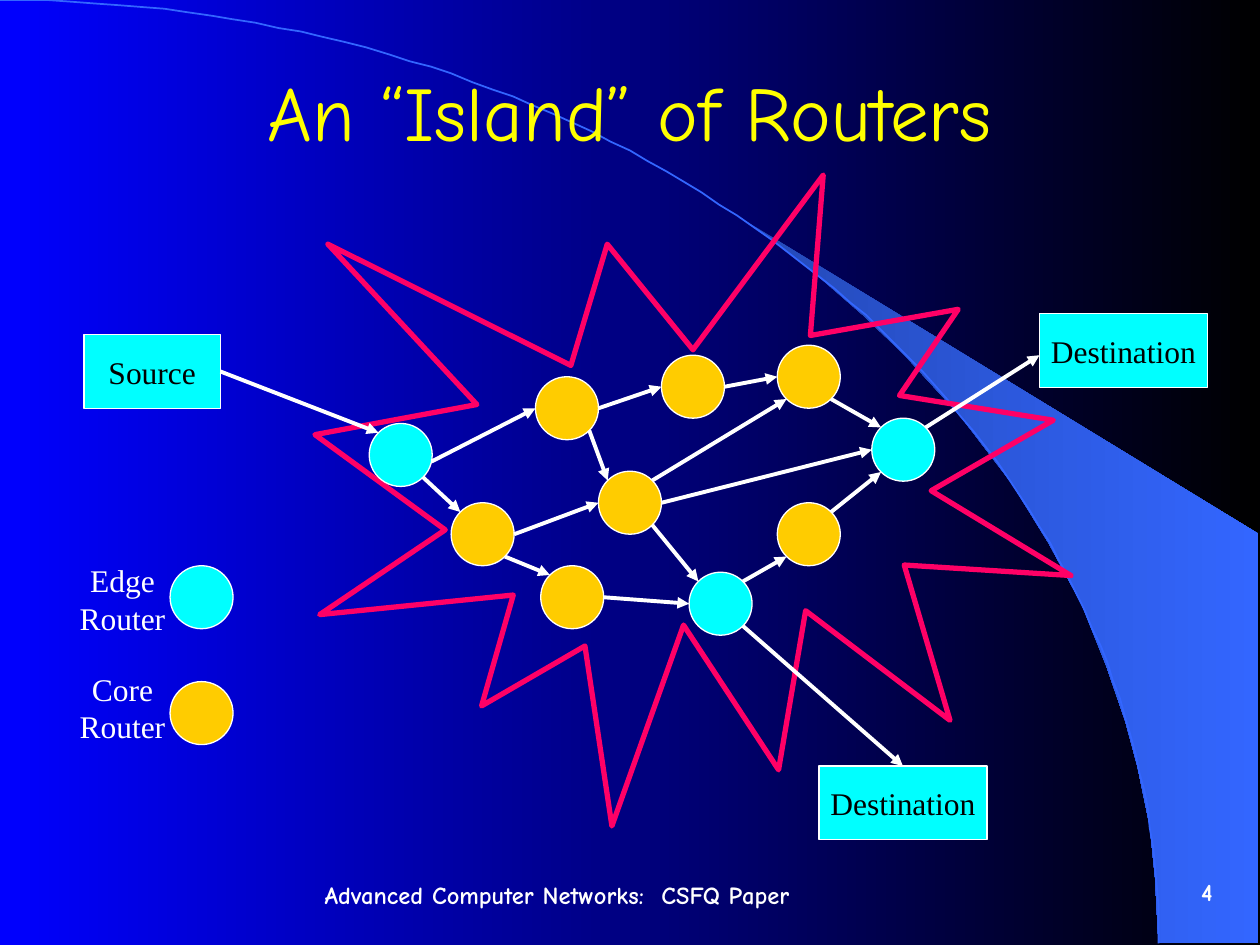
"""Build the slide showing an island of edge and core routers."""
import math
from dataclasses import dataclass

from lxml import etree
from pptx import Presentation
from pptx import util as u
from pptx.dml.color import RGBColor
from pptx.enum import shapes, text
from pptx.oxml.ns import qn


@dataclass(frozen=True)
class Theme:
    blue: str = "0000FF"
    black: str = "000000"
    white: str = "FFFFFF"
    yellow: str = "FFFF00"
    edge: str = "00FFFF"
    core: str = "FFCC00"
    island: str = "FF0066"
    arc: str = "3366FF"
    swoosh: str = "2449B6"
    display: str = "Comic Neue"
    body: str = "Times New Roman"
    title_size: float = 44
    label_size: float = 18
    footer_size: float = 14
    thin: float = 0.75
    arc_line: float = 1
    link_line: float = 2.25
    island_line: float = 3


@dataclass(frozen=True)
class Box:
    x: float
    y: float
    w: float
    h: float


@dataclass(frozen=True)
class Router:
    x: float
    y: float
    color: str
    d: float = 36

    def site(self, angle: float) -> tuple[float, float]:
        r, a = self.d / 2, math.radians(angle)
        return self.x + r + r * math.cos(a), self.y + r + r * math.sin(a)


@dataclass(frozen=True)
class Link:
    start: str
    out: float
    end: str
    into: float


@dataclass(frozen=True)
class Label:
    content: str
    box: Box
    size: float
    font: str
    color: str
    align: text.PP_ALIGN = text.PP_ALIGN.CENTER
    bold: bool = False
    wrap: bool = False


T = Theme()
E, SE, SW, W, NW, NE = 0, 45, 135, 180, 225, 315

ROUTERS = {
    "east": Router(498.2, 239, T.edge),
    "south": Router(393.8, 327, T.edge),
    "west": Router(211, 242, T.edge),
    "north west": Router(306, 215.3, T.core),
    "north": Router(378, 203, T.core),
    "north east": Router(444.2, 197.3, T.core),
    "center": Router(342, 269.3, T.core),
    "south east": Router(444.2, 287.3, T.core),
    "south west": Router(257.8, 287.3, T.core),
    "low": Router(309, 323.3, T.core),
    "edge key": Router(97.2, 323.3, T.edge),
    "core key": Router(97.2, 389.5, T.core),
}
LINKS = [
    Link("west", 12, "north west", W),
    Link("west", SE, "south west", NW),
    Link("north west", E, "north", W),
    Link("north west", SE, "center", NW),
    Link("north", E, "north east", W),
    Link("north east", SE, "east", NW),
    Link("south west", E, "center", W),
    Link("south west", SE, "low", NW),
    Link("center", NE, "north east", SW),
    Link("center", E, "east", W),
    Link("center", SE, "south", NW),
    Link("low", E, "south", W),
    Link("south", NE, "south east", SW),
    Link("south east", NE, "east", SW),
]
HOSTS = [
    ("Source", Box(48, 191.3, 78, 42)),
    ("Destination", Box(594, 179.3, 96, 42)),
    ("Destination", Box(468, 437.8, 96, 42)),
]
LABELS = [
    Label("An “Island” of Routers", Box(54, 18, 612, 90), T.title_size, T.display, T.yellow, wrap=True),
    Label("Edge\nRouter", Box(31, 321.3, 78, 42), T.label_size, T.body, T.white),
    Label("Core\nRouter", Box(31, 383.3, 78, 42), T.label_size, T.body, T.white),
    Label("Advanced Computer Networks:  CSFQ Paper", Box(178.5, 497, 351.5, 28), T.footer_size,
          T.display, T.white, text.PP_ALIGN.LEFT, True, True),
    Label("4", Box(592.5, 491, 107.5, 37), T.footer_size, T.display, T.white,
          text.PP_ALIGN.RIGHT, True, True),
]
SWOOSH = [
    (662.4, 538.6), (719.3, 539.3), (719.3, 304.6), (424.1, 124.6), (449.3, 143.3), (470.2, 159.8),
    (493.2, 180), (515.5, 201.6), (548.6, 237.6), (578.2, 276.5), (599, 310.3), (617.8, 344.9),
    (632.2, 380.2), (643, 411.8), (650.2, 438.5), (657.4, 472.3), (660.2, 501.1),
]


def rgb(color: str) -> RGBColor:
    return RGBColor.from_string(color)


def fill_gradient(fill, first: str, last: str) -> None:
    fill.gradient()
    fill.gradient_angle = 0
    for stop, color in zip(fill.gradient_stops, (first, last)):
        stop.color.rgb = rgb(color)


def set_line(line, color: str, width: float) -> None:
    line.color.rgb = rgb(color)
    line.width = u.Pt(width)


def add_outline(s, points: list[tuple[float, float]], close: bool):
    fb = s.shapes.build_freeform(*points[0], scale=u.Pt(1))
    fb.add_line_segments(points[1:], close=close)
    sp = fb.convert_to_shape()
    sp.shadow.inherit = False
    return sp


def add_backdrop(s) -> None:
    fill_gradient(s.background.fill, T.blue, T.black)
    sp = add_outline(s, SWOOSH, True)
    fill_gradient(sp.fill, T.swoosh, T.arc)
    sp.line.fill.background()
    steps = [i / 80 for i in range(81)]
    curve = [(3 * t * (1 - t) ** 2 * 365.8 + (3 * t * t * (1 - t) + t ** 3) * 662.4,
              3 * t * t * (1 - t) * 241.2 + t ** 3 * 539.3) for t in steps]
    sp = add_outline(s, curve, False)
    sp.fill.background()
    set_line(sp.line, T.arc, T.arc_line)


def add_preset(s, kind: shapes.MSO_SHAPE, b: Box, fill: str | None, line: str, width: float):
    sp = s.shapes.add_shape(kind, u.Pt(b.x), u.Pt(b.y), u.Pt(b.w), u.Pt(b.h))
    sp.shadow.inherit = False
    if fill:
        sp.fill.solid()
        sp.fill.fore_color.rgb = rgb(fill)
    else:
        sp.fill.background()
    set_line(sp.line, line, width)
    return sp


def add_arrow(s, start: tuple[float, float], end: tuple[float, float]) -> None:
    cx = s.shapes.add_connector(shapes.MSO_CONNECTOR.STRAIGHT, *(u.Pt(v) for v in (*start, *end)))
    set_line(cx.line, T.white, T.link_line)
    etree.SubElement(cx.line._get_or_add_ln(), qn("a:tailEnd"), type="triangle")
    etree.SubElement(cx._element.spPr, qn("a:effectLst"))


def write_text(sp, label: Label) -> None:
    tf = sp.text_frame
    tf.text = label.content
    tf.word_wrap = label.wrap
    tf.vertical_anchor = text.MSO_ANCHOR.MIDDLE
    for p in tf.paragraphs:
        p.alignment = label.align
        for r in p.runs:
            r.font.name, r.font.size, r.font.bold = label.font, u.Pt(label.size), label.bold
            r.font.color.rgb = rgb(label.color)


def main() -> None:
    prs = Presentation()
    prs.slide_width, prs.slide_height = u.Pt(720), u.Pt(540)
    s = prs.slides.add_slide(prs.slide_layouts[6])
    add_backdrop(s)
    add_preset(s, shapes.MSO_SHAPE.EXPLOSION_1 if hasattr(shapes.MSO_SHAPE, "EXPLOSION_1")
               else shapes.MSO_SHAPE.EXPLOSION1, Box(180, 100, 432, 372), None, T.island, T.island_line)
    for n in ROUTERS.values():
        add_preset(s, shapes.MSO_SHAPE.OVAL, Box(n.x, n.y, n.d, n.d), n.color, T.white, T.thin)
    for k in LINKS:
        add_arrow(s, ROUTERS[k.start].site(k.out), ROUTERS[k.end].site(k.into))
    for name, b in HOSTS:
        sp = add_preset(s, shapes.MSO_SHAPE.RECTANGLE, b, T.edge, T.white, T.thin)
        write_text(sp, Label(name, b, T.label_size, T.body, T.black))
    add_arrow(s, (126, 212.3), ROUTERS["west"].site(NW))
    add_arrow(s, ROUTERS["east"].site(NE), (594, 203))
    add_arrow(s, ROUTERS["south"].site(SE), (516, 437.8))
    for label in LABELS:
        b = label.box
        write_text(s.shapes.add_textbox(u.Pt(b.x), u.Pt(b.y), u.Pt(b.w), u.Pt(b.h)), label)
    prs.save("out.pptx")


if __name__ == "__main__":
    main()
